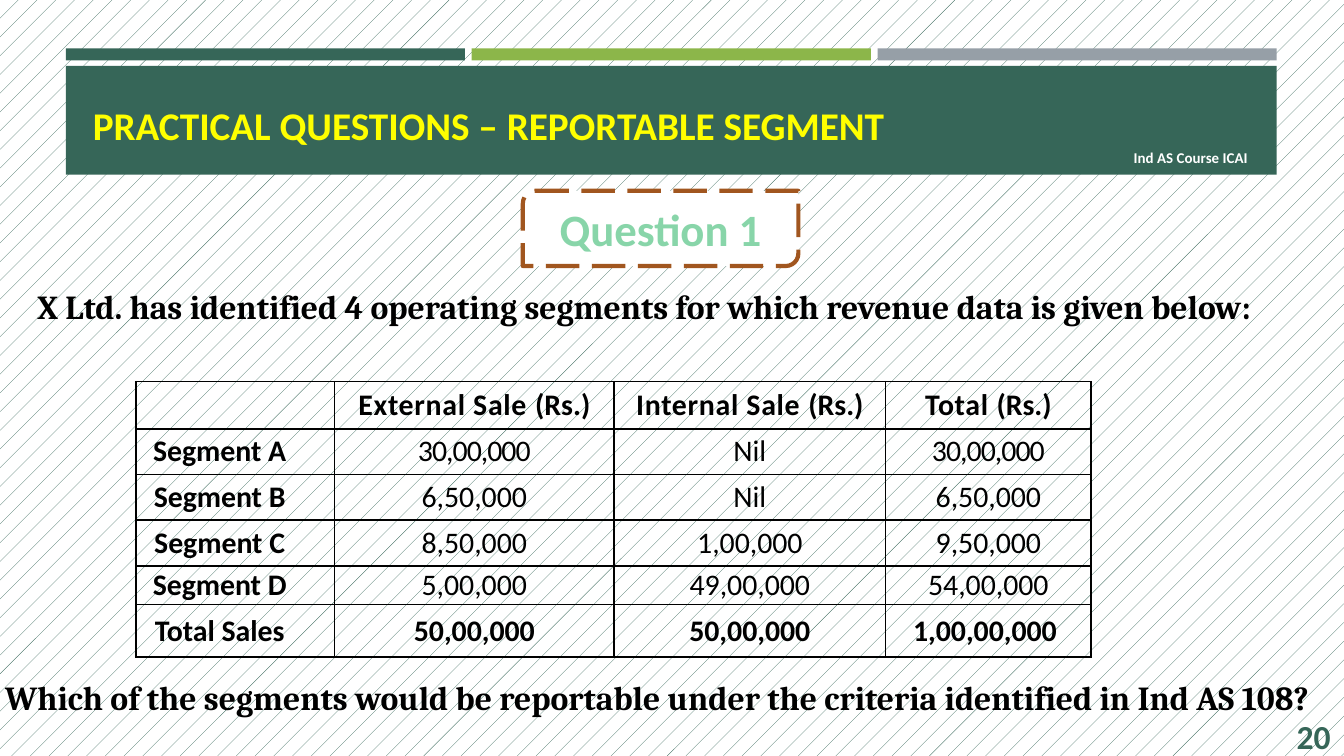
from lxml.etree import SubElement
from pptx import Presentation
from pptx.dml.color import RGBColor
from pptx.enum.dml import MSO_LINE_DASH_STYLE as DASH, MSO_PATTERN_TYPE as PATTERN
from pptx.enum.shapes import MSO_SHAPE as SHAPE
from pptx.enum.text import MSO_ANCHOR as ANCHOR, PP_ALIGN as ALIGN
from pptx.oxml.ns import qn
from pptx.util import Inches, Pt

GREEN, LIME, GREY = "366658", "8CB64A", "969FA7"
WHITE, BLACK, YELLOW = "FFFFFF", "000000", "FFFF00"
BROWN, MINT = "A1561F", "88D5A9"

SLIDE_WIDTH = 10
SLIDE_HEIGHT = SLIDE_WIDTH * 9 / 16
COLUMN_WIDTHS = [1.48, 2.08, 2.02, 1.53]
ROW_HEIGHTS = [0.35, 0.34, 0.34, 0.34, 0.29, 0.39]
ROWS = [
    ["", "External Sale (Rs.)", "Internal Sale (Rs.)", "Total (Rs.)"],
    ["Segment A", "30,00,000", "Nil", "30,00,000"],
    ["Segment B", "6,50,000", "Nil", "6,50,000"],
    ["Segment C", "8,50,000", "1,00,000", "9,50,000"],
    ["Segment D", "5,00,000", "49,00,000", "54,00,000"],
    ["Total Sales", "50,00,000", "50,00,000", "1,00,00,000 "],
]


def color(value):
    """Turn a hex string into a colour."""
    return RGBColor.from_string(value)


def write(frame, text, size=18, font="Calibri", fill=BLACK, bold=True,
          align=ALIGN.CENTER, anchor=ANCHOR.MIDDLE, spacing=0):
    """Append one formatted run to the first paragraph of a text frame."""
    frame.word_wrap = True
    frame.vertical_anchor = anchor
    paragraph = frame.paragraphs[0]
    paragraph.alignment = align
    run = paragraph.add_run()
    run.text = text
    run.font.size = Pt(size)
    run.font.name = font
    run.font.bold = bold
    run.font.color.rgb = color(fill)
    if spacing:
        run.font._element.set("spc", str(spacing))


def add_box(slide, left, top, width, height, fill, kind=SHAPE.RECTANGLE):
    """Add a filled shape without outline or shadow."""
    shape = slide.shapes.add_shape(
        kind, Inches(left), Inches(top), Inches(width), Inches(height))
    shape.shadow.inherit = False
    shape.fill.solid()
    shape.fill.fore_color.rgb = color(fill)
    shape.line.fill.background()
    return shape


def add_text(slide, text, left, top, width, height, **text_format):
    """Add a text box with one formatted line."""
    box = slide.shapes.add_textbox(
        Inches(left), Inches(top), Inches(width), Inches(height))
    write(box.text_frame, text, **text_format)


def add_banner(slide):
    """Add the three bars, the title band and its course label."""
    for index, fill in enumerate([GREEN, LIME, GREY]):
        add_box(slide, 0.49 + index * 3.02, 0.36, 2.97, 0.09, fill)
    add_box(slide, 0.49, 0.49, 9.01, 0.81, GREEN)
    label = add_box(slide, 8.27, 1.12, 1.18, 0.11, GREEN)
    write(label.text_frame, "Ind AS Course ICAI", size=8, fill=WHITE)


def place_title(slide, text):
    """Move the title placeholder onto the band and fill it."""
    title = slide.shapes.title
    title.left, title.top = Inches(0.59), Inches(0.55)
    title.width, title.height = Inches(8.03), Inches(0.75)
    write(title.text_frame, text, size=21, fill=YELLOW, align=ALIGN.JUSTIFY)
    tree = title._element.getparent()
    tree.append(title._element)


def format_cell(cell):
    """Give a cell thin black borders, no margins and no fill."""
    properties = cell._tc.get_or_add_tcPr()
    for side in ("a:lnL", "a:lnR", "a:lnT", "a:lnB"):
        border = SubElement(properties, qn(side), w=str(Pt(1)))
        SubElement(SubElement(border, qn("a:solidFill")), qn("a:srgbClr"), val=BLACK)
    cell.fill.background()
    cell.vertical_anchor = ANCHOR.MIDDLE
    cell.margin_left = cell.margin_right = cell.margin_top = cell.margin_bottom = 0


def fill_cell(cell, text, row, column):
    """Write a cell's text, with loose headings and tight long amounts."""
    if row == 0 and text:
        heading, unit = text.split("(")
        write(cell.text_frame, heading, size=16, spacing=40)
        write(cell.text_frame, "(" + unit, size=16)
    elif text:
        bold = column == 0 or row == len(ROWS) - 1
        spacing = -50 if text == "30,00,000" else 0
        write(cell.text_frame, text, size=16, bold=bold, spacing=spacing)
        if column == 0:
            cell.margin_right = Inches(0.23)


def add_sales_table(slide):
    """Add the table of sales by segment."""
    table = slide.shapes.add_table(
        len(ROWS), len(COLUMN_WIDTHS), Inches(1.01), Inches(2.84),
        Inches(sum(COLUMN_WIDTHS)), Inches(sum(ROW_HEIGHTS))).table
    table.first_row = table.horz_banding = False
    for column, width in zip(table.columns, COLUMN_WIDTHS):
        column.width = Inches(width)
    for row, height in zip(table.rows, ROW_HEIGHTS):
        row.height = Inches(height)
    for row, texts in enumerate(ROWS):
        for column, text in enumerate(texts):
            cell = table.cell(row, column)
            format_cell(cell)
            fill_cell(cell, text, row, column)


def add_question_badge(slide):
    """Add the dashed badge with the question number."""
    badge = add_box(slide, 3.89, 1.42, 2.05, 0.56, WHITE, SHAPE.ROUND_2_DIAG_RECTANGLE)
    badge.line.color.rgb = color(BROWN)
    badge.line.width = Pt(2.25)
    badge.line.dash_style = DASH.LONG_DASH
    write(badge.text_frame, "Question 1", size=24, fill=MINT)


def main():
    """Build and save the slide."""
    presentation = Presentation()
    presentation.slide_width = Inches(SLIDE_WIDTH)
    presentation.slide_height = Inches(SLIDE_HEIGHT)
    slide = presentation.slides.add_slide(presentation.slide_layouts[5])
    background = slide.background.fill
    background.patterned()
    background.pattern = PATTERN.PERCENT_5
    background.fore_color.rgb = color(GREEN)
    background.back_color.rgb = color(WHITE)

    add_banner(slide)
    place_title(slide, "PRACTICAL QUESTIONS – REPORTABLE SEGMENT")
    add_text(slide, "20", 9.16, 5.33, 0.84, 0.3, fill=GREEN, align=ALIGN.RIGHT)
    statement = {"font": "Cambria", "align": ALIGN.JUSTIFY, "anchor": ANCHOR.TOP}
    add_text(slide, "X Ltd. has identified 4 operating segments for which revenue "
             "data is given below:", 0.18, 2.08, 9.51, 0.4, **statement)
    add_sales_table(slide)
    add_text(slide, "Which of the segments would be reportable under the criteria "
             "identified in Ind AS 108?", -0.06, 4.99, 10.22, 0.4, **statement)
    add_question_badge(slide)
    presentation.save("out.pptx")


if __name__ == "__main__":
    main()
